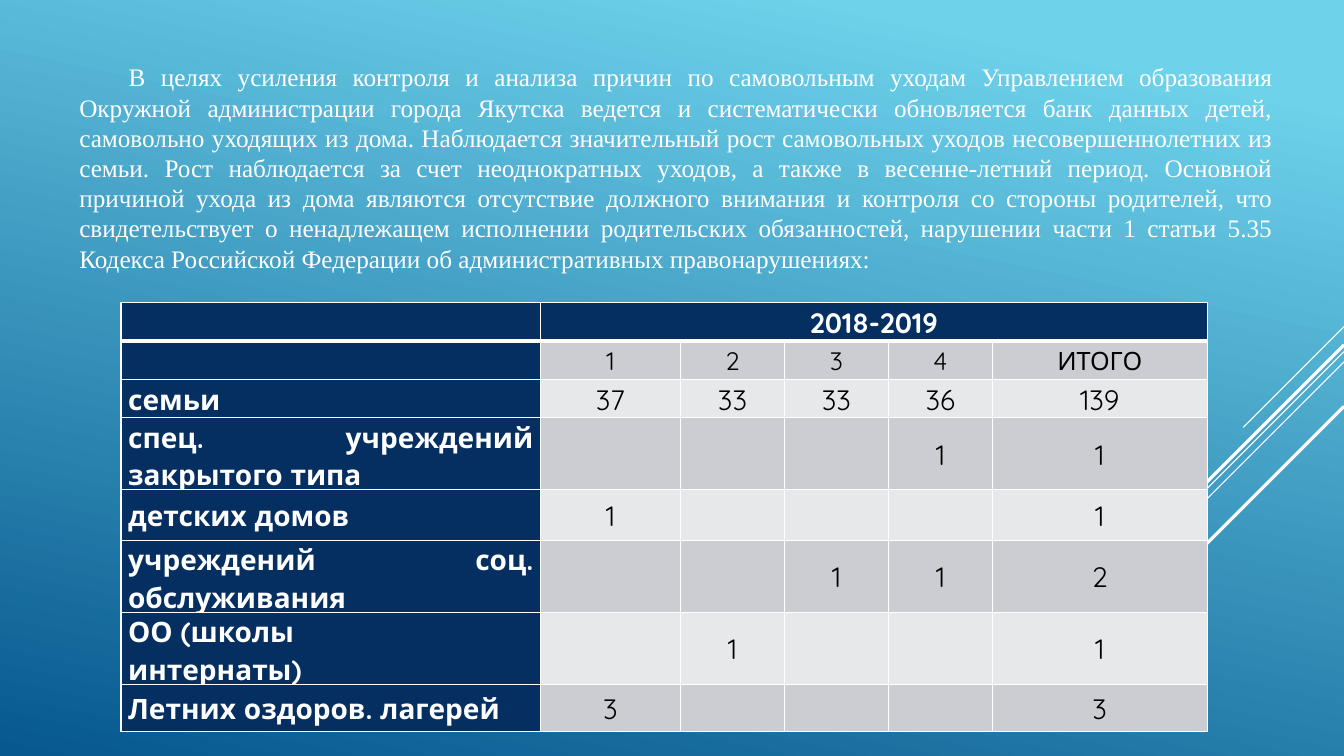
from dataclasses import dataclass

from lxml.etree import SubElement
from pptx import Presentation
from pptx.dml.color import RGBColor
from pptx.enum.shapes import MSO_CONNECTOR as Connector
from pptx.enum.text import MSO_ANCHOR as Anchor, MSO_AUTO_SIZE as AutoSize, PP_ALIGN as Align
from pptx.oxml.ns import qn
from pptx.util import Cm, Pt


@dataclass(frozen=True)
class Theme:
    sky: str = "6ED2EB"
    deep: str = "06588E"
    navy: str = "052F61"
    white: str = "FFFFFF"
    black: str = "000000"
    bands: tuple = ("E7E8EA", "CCCDD2")
    body_font: str = "Times New Roman"
    table_font: str = "Quicksand"
    body_size: int = 18
    table_size: int = 20


THEME = Theme()
WIDTH, HEIGHT = 33.87, 19.05

INTRO = (
    "В целях усиления контроля и анализа причин по самовольным уходам Управлением образования "
    "Окружной администрации города Якутска ведется и систематически обновляется банк данных детей, "
    "самовольно уходящих из дома. Наблюдается значительный рост самовольных уходов "
    "несовершеннолетних из семьи. Рост наблюдается за счет неоднократных уходов, а также в "
    "весенне-летний период. Основной причиной ухода из дома являются отсутствие должного внимания "
    "и контроля со стороны родителей, что свидетельствует о ненадлежащем исполнении родительских "
    "обязанностей, нарушении части 1 статьи 5.35 Кодекса Российской Федерации об административных "
    "правонарушениях:"
)

RAYS = [(8.23, 2.54, 0.75), (8.86, 8.28, 0.75), (9.12, 5.26, 0.75), (8.69, 4.85, 2.25), (10.24, 3.53, 2.25)]

COLUMN_WIDTHS = [10.57, 3.53, 2.62, 2.62, 2.62, 5.41]
ROW_HEIGHTS = [0.97, 0.97, 0.97, 1.8, 1.27, 1.8, 1.8, 1.19]
ROWS = [
    ["", "2018-2019", "", "", "", ""],
    ["", "1", "2", "3", "4", "ИТОГО"],
    ["семьи", "37", "33", "33", "36", "139"],
    ["спец. учреждений закрытого типа", "", "", "", "1", "1"],
    ["детских домов", "1", "", "", "", "1"],
    ["учреждений соц. обслуживания", "", "", "1", "1", "2"],
    ["ОО (школы\vинтернаты)", "", "1", "", "", "1"],
    ["Летних оздоров. лагерей", "3", "", "", "", "3"],
]


def color(value):
    return RGBColor.from_string(value)


def paint_background(page):
    fill = page.background.fill
    fill.gradient()
    fill.gradient_angle = 258
    for stop, position, tone in zip(fill.gradient_stops, (0.1, 1), (THEME.sky, THEME.deep)):
        stop.position = position
        stop.color.rgb = color(tone)


def add_ray(page, top, reach, weight):
    ray = page.shapes.add_connector(
        Connector.STRAIGHT, Cm(WIDTH), Cm(top), Cm(WIDTH - reach), Cm(top + reach)
    )
    ray.line.color.rgb = color(THEME.white)
    ray.line.width = Pt(weight)
    SubElement(ray._element.spPr, qn("a:effectLst"))


def add_span(para, text, font, size, tone, bold=False):
    for index, line in enumerate(text.split("\v")):
        if index:
            para.add_line_break()
        span = para.add_run()
        span.text = line
        span.font.name = font
        span.font.size = Pt(size)
        span.font.bold = bold
        span.font.color.rgb = color(tone)


def add_intro(page):
    box = page.shapes.add_textbox(Cm(1.75), Cm(1.4), Cm(30.58), Cm(5.64))
    frame = box.text_frame
    frame.word_wrap = True
    frame.auto_size = AutoSize.SHAPE_TO_FIT_TEXT
    frame.vertical_anchor = Anchor.MIDDLE
    para = frame.paragraphs[0]
    para.alignment = Align.JUSTIFY
    para._p.get_or_add_pPr().set("indent", str(Cm(1.24)))
    add_span(para, INTRO, THEME.body_font, THEME.body_size, THEME.white)


def set_borders(cell, bottom):
    properties = cell._tc.get_or_add_tcPr()
    for index, (side, weight) in enumerate((("L", 1), ("R", 1), ("T", 1), ("B", bottom))):
        border = properties.makeelement(qn(f"a:ln{side}"), {"w": str(Pt(weight))})
        properties.insert(index, border)
        SubElement(SubElement(border, qn("a:solidFill")), qn("a:srgbClr"), val=THEME.white)


def fill_cell(cell, text, row, column):
    label = column == 0
    dark = label or row == 0
    cell.fill.solid()
    cell.fill.fore_color.rgb = color(THEME.navy if dark else THEME.bands[row % 2])
    set_borders(cell, 3 if row == 0 else 1)
    cell.vertical_anchor = Anchor.MIDDLE
    cell.margin_left = cell.margin_right = Cm(0.18)
    cell.margin_top = cell.margin_bottom = 0
    if not text:
        return
    para = cell.text_frame.paragraphs[0]
    para.line_spacing = 1.07
    if not label:
        para.alignment = Align.CENTER
    else:
        para.alignment = Align.LEFT if "\v" in text else Align.JUSTIFY
    size = THEME.body_size if row == 1 else THEME.table_size
    add_span(para, text, THEME.table_font, size, THEME.white if dark else THEME.black, dark)


def add_departures_table(page):
    table = page.shapes.add_table(
        len(ROWS), len(COLUMN_WIDTHS), Cm(3.05), Cm(7.62), Cm(sum(COLUMN_WIDTHS)), Cm(sum(ROW_HEIGHTS))
    ).table
    for column, width in zip(table.columns, COLUMN_WIDTHS):
        column.width = Cm(width)
    for row, height in zip(table.rows, ROW_HEIGHTS):
        row.height = Cm(height)
    for row, texts in enumerate(ROWS):
        for column, text in enumerate(texts):
            fill_cell(table.cell(row, column), text, row, column)
    table.cell(0, 1).merge(table.cell(0, len(COLUMN_WIDTHS) - 1))


def main():
    deck = Presentation()
    deck.slide_width, deck.slide_height = Cm(WIDTH), Cm(HEIGHT)
    page = deck.slides.add_slide(deck.slide_layouts[6])
    paint_background(page)
    for ray in RAYS:
        add_ray(page, *ray)
    add_intro(page)
    add_departures_table(page)
    deck.save("out.pptx")


if __name__ == "__main__":
    main()
